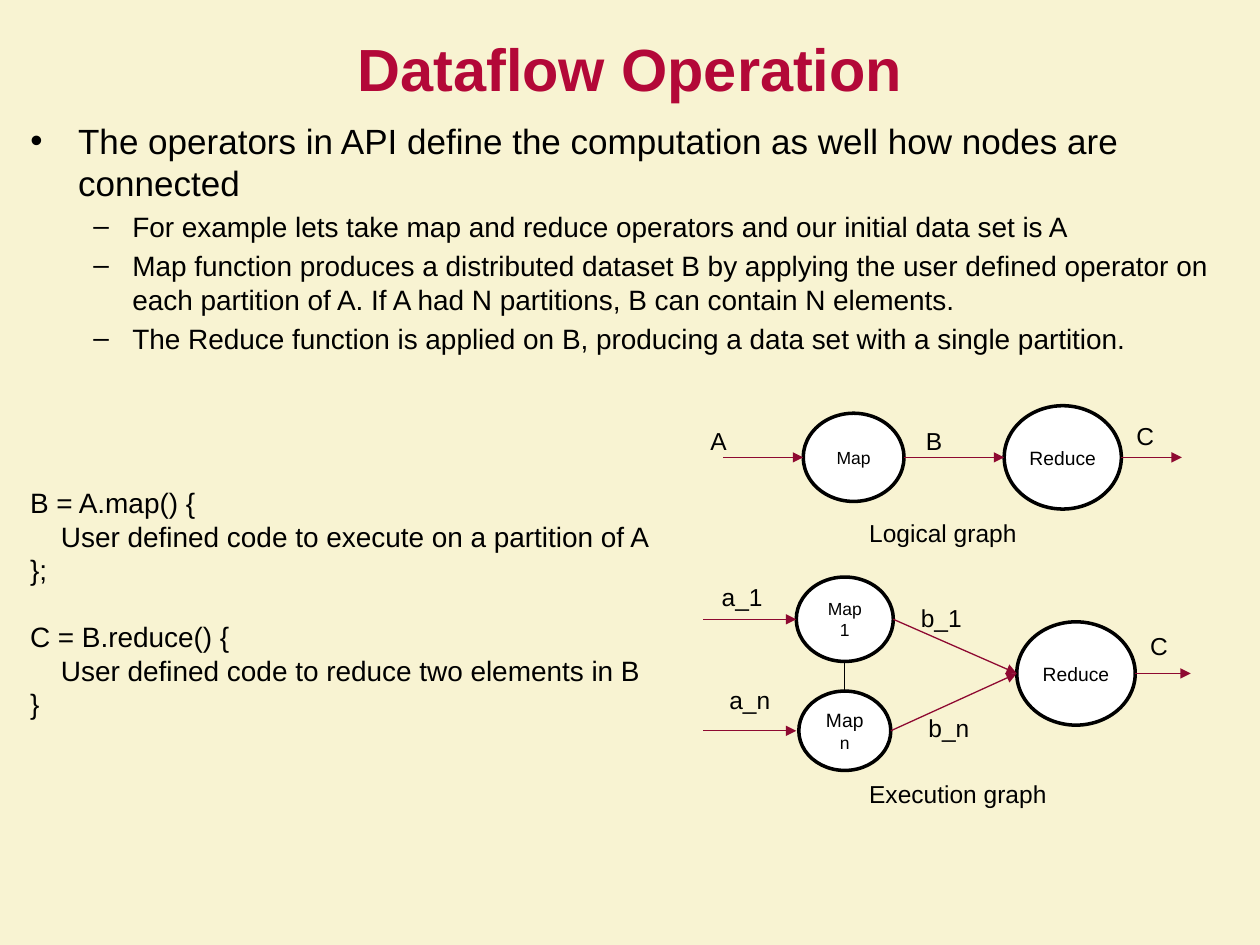
from lxml.etree import SubElement
from pptx import Presentation
from pptx.dml.color import RGBColor
from pptx.enum.shapes import MSO_CONNECTOR, MSO_SHAPE
from pptx.enum.text import MSO_ANCHOR, MSO_AUTO_SIZE, PP_ALIGN
from pptx.oxml.ns import qn
from pptx.util import Inches, Pt

HUES = {"page": "F8F3D2", "title": "B30838", "text": "000000",
        "node": "FFFFFF", "edge": "8E0931"}
POINTS = [
    (0, "The operators in API define the computation as well how nodes are connected"),
    (1, "For example lets take map and reduce operators and our initial data set is A"),
    (1, "Map function produces a distributed dataset B by applying the user defined "
        "operator on each partition of A. If A had N partitions, B can contain N elements."),
    (1, "The Reduce function is applied on B, producing a data set with a single partition."),
]
# size, left margin and hanging indent of each list level
LEVELS = [(20, 0.38, 0.38), (16, 0.81, 0.31)]
CODE = [
    ["B = A.map() {", "    User defined code to execute on a partition of A", "};"],
    ["C = B.reduce() {", "    User defined code to reduce two elements in B", "}"],
]
# text, left, top and width
LABELS = [
    ("A", 55.4, 33.3, 3.4), ("B", 72.5, 33.3, 3.4), ("C", 89.2, 32.9, 3.5),
    ("Logical graph", 68, 40.6, 13.8),
    ("a_1", 56.3, 45.7, 5.3), ("a_n", 56.9, 53.9, 5.3),
    ("b_1", 72.1, 47.4, 5.3), ("b_n", 72.7, 56.1, 5.3), ("C", 90.3, 49.6, 3.5),
    ("Execution graph", 68, 61.3, 16.3),
]


def grid(*cells):
    """Lengths on a grid of 100 columns by 75 rows."""
    return [Inches(cell / 10) for cell in cells]


def hue(name):
    return RGBColor.from_string(HUES[name])


def place(shape, *cells):
    shape.left, shape.top, shape.width, shape.height = grid(*cells)


def write(para, text, size, color="text", bold=False):
    run = para.add_run()
    run.text = text
    font = run.font
    font.name, font.size, font.bold = "Arial", Pt(size), bold
    font.color.rgb = hue(color)


def add_para(frame, first):
    return frame.paragraphs[0] if first else frame.add_paragraph()


def add_shape(slide, kind, color, *cells):
    shape = slide.shapes.add_shape(kind, *grid(*cells))
    shape.shadow.inherit = False
    shape.fill.solid()
    shape.fill.fore_color.rgb = hue(color)
    return shape


def add_page(slide):
    """Lays the page colour behind all else."""
    page = add_shape(slide, MSO_SHAPE.RECTANGLE, "page", 0, 0, 100, 75)
    page.line.fill.background()
    slide.shapes.title._element.addprevious(page._element)


def add_title(slide):
    title = slide.shapes.title
    place(title, 0, 0.3, 100, 10.1)
    frame = title.text_frame
    frame.vertical_anchor = MSO_ANCHOR.MIDDLE
    frame.paragraphs[0].alignment = PP_ALIGN.CENTER
    write(frame.paragraphs[0], "Dataflow Operation", 34, "title", True)


def add_list(slide):
    body = slide.placeholders[1]
    place(body, 1.4, 9, 97.2, 22.3)
    frame = body.text_frame
    frame.auto_size = MSO_AUTO_SIZE.NONE
    for i, (level, text) in enumerate(POINTS):
        size, left, hang = LEVELS[level]
        para = add_para(frame, i == 0)
        para.level = level
        para.space_before = Pt(size * 0.2 if i else 0)
        props = para._p.get_or_add_pPr()
        props.set("marL", str(Inches(left)))
        props.set("indent", str(-Inches(hang)))
        SubElement(props, qn("a:buChar"), char="–" if level else "•")
        write(para, text, size)


def add_code(slide):
    frame = slide.shapes.add_textbox(*grid(1.4, 38.05, 52.8, 19.9)).text_frame
    frame.word_wrap = True
    for i, block in enumerate(CODE):
        for j, line in enumerate(block):
            para = add_para(frame, i == j == 0)
            if i and j == 0:
                para.space_before = Pt(19)
            write(para, line, 16)


def add_label(slide, text, left, top, wide):
    frame = slide.shapes.add_textbox(*grid(left, top, wide, 3.4)).text_frame
    frame.word_wrap = False
    frame.auto_size = MSO_AUTO_SIZE.SHAPE_TO_FIT_TEXT
    write(frame.paragraphs[0], text, 14)


def add_node(slide, mid, row, wide, high, lines, inset=1):
    """Draws an ellipse around (mid, row); gives its left and right ends."""
    left = mid - wide / 2
    node = add_shape(slide, MSO_SHAPE.OVAL, "node", left, row - high / 2, wide, high)
    node.line.color.rgb = hue("text")
    node.line.width = Pt(2)
    frame = node.text_frame
    frame.word_wrap = True
    frame.vertical_anchor = MSO_ANCHOR.MIDDLE
    frame.margin_left, frame.margin_right = grid(inset, inset)
    frame.margin_top, frame.margin_bottom = grid(inset / 2, inset / 2)
    for i, (text, size) in enumerate(lines):
        para = add_para(frame, i == 0)
        para.alignment = PP_ALIGN.CENTER
        write(para, text, size)
    return (left, row), (left + wide, row)


def add_edge(slide, start, end, color="edge", head=True):
    edge = slide.shapes.add_connector(MSO_CONNECTOR.STRAIGHT, *grid(*start, *end))
    edge.line.color.rgb = hue(color)
    edge.line.width = Pt(0.75)
    if head:
        SubElement(edge.line._get_or_add_ln(), qn("a:tailEnd"), type="triangle")
    SubElement(edge._element.spPr, qn("a:effectLst"))


def add_logic(slide):
    row = 36.3
    map_in, map_out = add_node(slide, 67.75, row, 8, 7, [("Map", 10)])
    red_in, red_out = add_node(slide, 84.35, row, 9.3, 8.2, [("Reduce", 11)], 0)
    add_edge(slide, (57.4, row), map_in)
    add_edge(slide, map_out, red_in)
    add_edge(slide, red_out, (93.8, row))


def add_run_graph(slide):
    mid, top, low = 67.05, 49.15, 58
    red_in, red_out = add_node(slide, 85.4, 53.45, 9.4, 8.2, [("Reduce", 11)], 0)
    maps = [
        add_node(slide, mid, top, 7.7, 6.7, [("Map 1", 10)]),
        add_node(slide, mid, low, 7.3, 6.3, [("Map", 11), ("n", 10)]),
    ]
    for (left, row), out in maps:
        add_edge(slide, (55.8, row), (63.2, row))
        add_edge(slide, out, red_in)
    add_edge(slide, red_out, (94.5, red_out[1]))
    add_edge(slide, (mid, 52.5), (mid, 54.9), "text", False)


def main():
    deck = Presentation()
    deck.slide_width, deck.slide_height = grid(100, 75)
    slide = deck.slides.add_slide(deck.slide_layouts[1])
    add_page(slide)
    add_title(slide)
    add_list(slide)
    add_code(slide)
    add_logic(slide)
    add_run_graph(slide)
    for label in LABELS:
        add_label(slide, *label)
    deck.save("out.pptx")


if __name__ == "__main__":
    main()
